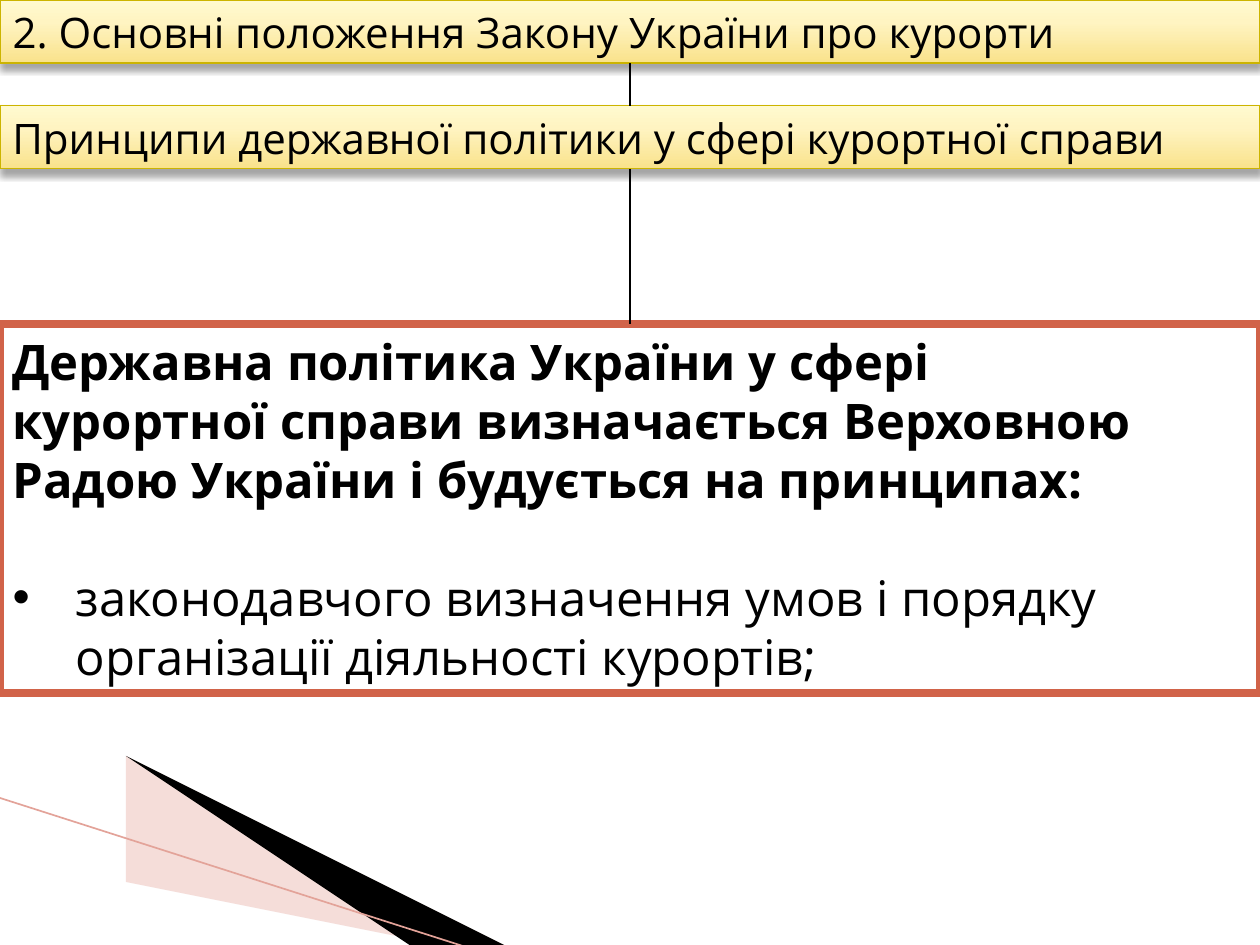
from dataclasses import dataclass

from lxml import etree
from pptx import Presentation
from pptx import util as u
from pptx.dml.color import RGBColor
from pptx.enum import shapes, text
from pptx.oxml import parse_xml
from pptx.oxml.ns import nsdecls, qn


@dataclass(frozen=True)
class Theme:
    font: str = "Open Sans"
    head: int = 24
    body: int = 28
    ink: str = "000000"
    paper: str = "FFFFFF"
    frame: str = "D16349"
    edge: str = "CCB400"
    blush: str = "E6AAA1"
    rose: str = "E3A399"
    gold: tuple = ((0, "F9E28B"), (65, "FFF4C2"), (100, "FFFACF"))


T = Theme()
WIDE, HIGH = 10, 7.5
MID = WIDE / 2
BAR = 0.5
STEP = 0.84
TOP, TALL = 2.57, 2.93


def rgb(code):
    return RGBColor.from_string(code)


def place(shape, left, top, width, height):
    shape.left, shape.top = u.Inches(left), u.Inches(top)
    shape.width, shape.height = u.Inches(width), u.Inches(height)


def stroke(item, color, width):
    item.line.color.rgb = rgb(color)
    item.line.width = u.Pt(width)


def write(para, words, size=T.body, bold=False, color=T.ink, before=0, mark=None):
    props = para._p.get_or_add_pPr()
    indent = u.Inches(0.5) if mark else 0
    props.set("marL", str(indent))
    props.set("indent", str(-indent))
    if mark:
        etree.SubElement(props, qn("a:buFont")).set("typeface", "Arial")
        etree.SubElement(props, qn("a:buChar")).set("char", mark)
    else:
        etree.SubElement(props, qn("a:buNone"))
    para.alignment = text.PP_ALIGN.LEFT
    para.space_before = u.Pt(before)
    run = para.add_run()
    run.text = words
    font = run.font
    font.name, font.size, font.bold = T.font, u.Pt(size), bold
    font.color.rgb = rgb(color)


def setup(shape, anchor, right=0.1):
    frame = shape.text_frame
    frame.word_wrap = True
    frame.auto_size = text.MSO_AUTO_SIZE.NONE
    frame.vertical_anchor = anchor
    frame.margin_left, frame.margin_right = u.Inches(0.1), u.Inches(right)
    frame.margin_top = frame.margin_bottom = u.Inches(0.05)
    return frame


def gild(shape):
    """Give a bar its gold gradient and soft drop shadow."""
    stops = "".join(
        f'<a:gs pos="{pos * 1000}"><a:srgbClr val="{code}"/></a:gs>'
        for pos, code in T.gold)
    props = shape._element.spPr
    line = props.find(qn("a:ln"))
    line.addprevious(parse_xml(
        f'<a:gradFill {nsdecls("a")}><a:gsLst>{stops}</a:gsLst>'
        '<a:lin ang="16200000" scaled="0"/></a:gradFill>'))
    line.addnext(parse_xml(
        f'<a:effectLst {nsdecls("a")}><a:outerShdw blurRad="{u.Pt(4)}" '
        f'dist="{u.Pt(3)}" dir="5400000" rotWithShape="0"><a:srgbClr val="{T.ink}">'
        '<a:alpha val="35000"/></a:srgbClr></a:outerShdw></a:effectLst>'))


def bar(shape, row, words):
    place(shape, 0, row * STEP, WIDE, BAR)
    stroke(shape, T.edge, 0.75)
    gild(shape)
    frame = setup(shape, text.MSO_ANCHOR.MIDDLE)
    write(frame.paragraphs[0], words, size=T.head)


def panel(shape, intro, points):
    place(shape, 0, TOP, WIDE, TALL)
    shape.fill.solid()
    shape.fill.fore_color.rgb = rgb(T.paper)
    stroke(shape, T.frame, 4.33)
    frame = setup(shape, text.MSO_ANCHOR.MIDDLE, right=0.8)
    write(frame.paragraphs[0], intro, bold=True)
    for point in points:
        write(frame.add_paragraph(), point, before=34, mark="•")


def rule(slide, start, end, color=T.ink, width=0.75):
    line = slide.shapes.add_connector(
        shapes.MSO_CONNECTOR.STRAIGHT, *map(u.Inches, start + end))
    stroke(line, color, width)
    etree.SubElement(line._element.spPr, qn("a:effectLst"))


def wedge(slide, points, color, alpha=100):
    draft = slide.shapes.build_freeform(*points[0], scale=u.Inches(1))
    draft.add_line_segments(points[1:], close=True)
    shape = draft.convert_to_shape()
    shape.shadow.inherit = False
    shape.fill.solid()
    shape.fill.fore_color.rgb = rgb(color)
    shape.line.fill.background()
    tint = shape._element.spPr.find(qn("a:solidFill"))[0]
    etree.SubElement(tint, qn("a:alpha")).set("val", str(alpha * 1000))


def corner(slide):
    wedge(slide, [(0.55, 6.51), (5.95, 7.51), (4.56, 7.51), (0.55, 6.5)],
          T.blush, alpha=40)
    wedge(slide, [(0.53, 6.49), (4.57, 7.51), (3.72, 7.52), (0.54, 6.5)], T.ink)
    rule(slide, (-0.01, 6.33), (3.71, 7.52), T.rose, 0.95)


def main():
    deck = Presentation()
    deck.slide_width, deck.slide_height = u.Inches(WIDE), u.Inches(HIGH)
    slide = deck.slides.add_slide(deck.slide_layouts[1])
    title, body = slide.placeholders
    corner(slide)
    bar(title, 0, "2. Основні положення Закону України про курорти")
    label = slide.shapes.add_shape(shapes.MSO_SHAPE.RECTANGLE, 0, 0, 0, 0)
    bar(label, 1, "Принципи державної політики у сфері курортної справи")
    panel(body,
          "Державна політика України у сфері курортної справи визначається "
          "Верховною Радою України і будується на принципах:",
          ["законодавчого визначення умов і порядку організації "
           "діяльності курортів;"])
    rule(slide, (MID, BAR), (MID, STEP))
    rule(slide, (MID, STEP + BAR), (MID, TOP))
    deck.save("out.pptx")


if __name__ == "__main__":
    main()
